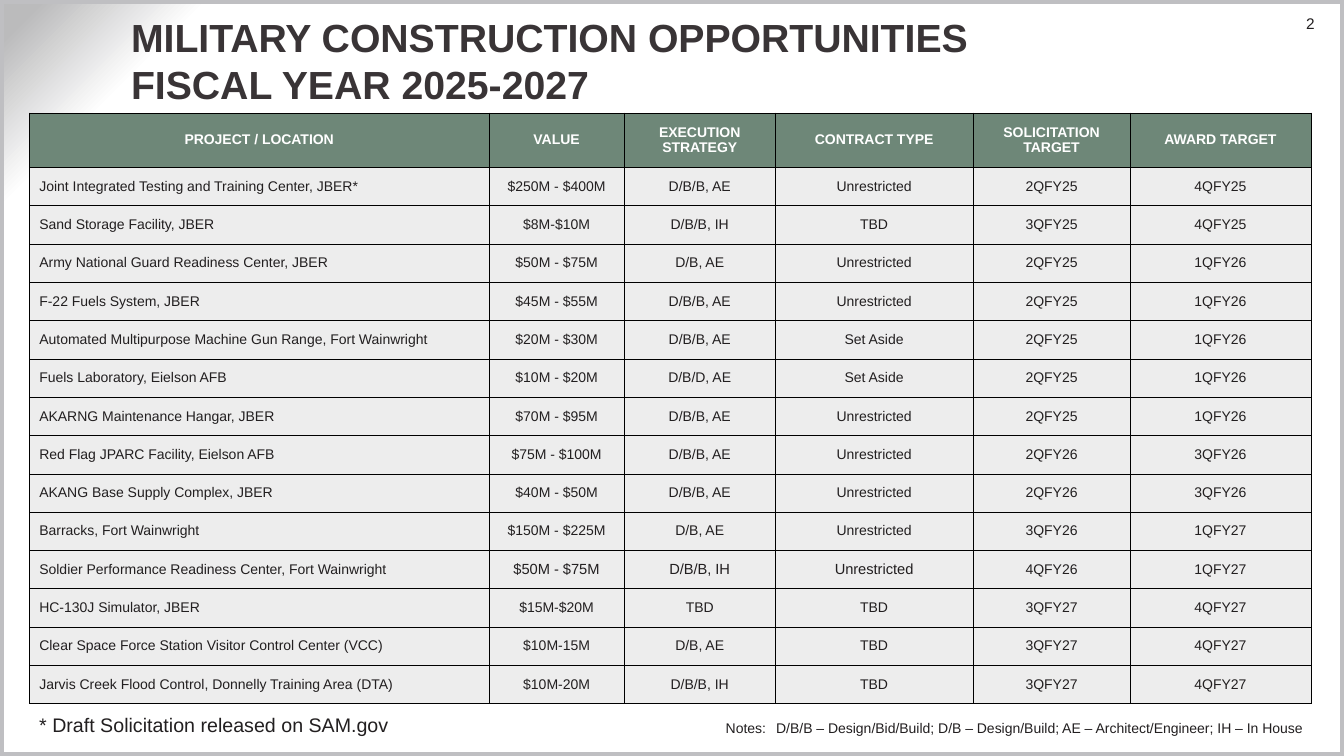
from pptx import Presentation
from pptx import util as u
from pptx.dml.color import RGBColor
from pptx.enum import shapes, text
from pptx.oxml import parse_xml
from pptx.oxml.ns import nsdecls

COLORS = {"ink": "221F20", "title": "393436", "white": "FFFFFF", "frame": "BFBFC2",
          "corner": "BBBBBC", "header": "6E8778", "row": "EDEDED", "grid": "000000"}
LEFT, CENTER, RIGHT = text.PP_ALIGN.LEFT, text.PP_ALIGN.CENTER, text.PP_ALIGN.RIGHT
COLUMN_WIDTHS = [4.56, 1.34, 1.5, 1.96, 1.56, 1.79]
HEADER_HEIGHT, ROW_HEIGHT = 0.54, 0.38
NOTE_TABS = [0.25, 0.5, 0.75, 1, 1.5, 2, 2.25, 2.5]
HEADINGS = ["PROJECT / LOCATION", "VALUE", "EXECUTION STRATEGY", "CONTRACT TYPE",
            "SOLICITATION TARGET", "AWARD TARGET"]
PROJECTS = [
    ["Joint Integrated Testing and Training Center, JBER*", "$250M - $400M", "D/B/B, AE", "Unrestricted", "2QFY25", "4QFY25"],
    ["Sand Storage Facility, JBER", "$8M-$10M", "D/B/B, IH", "TBD", "3QFY25", "4QFY25"],
    ["Army National Guard Readiness Center, JBER", "$50M - $75M", "D/B, AE", "Unrestricted", "2QFY25", "1QFY26"],
    ["F-22 Fuels System, JBER", "$45M - $55M", "D/B/B, AE", "Unrestricted", "2QFY25", "1QFY26"],
    ["Automated Multipurpose Machine Gun Range, Fort Wainwright", "$20M - $30M", "D/B/B, AE", "Set Aside", "2QFY25", "1QFY26"],
    ["Fuels Laboratory, Eielson AFB", "$10M - $20M", "D/B/D, AE", "Set Aside", "2QFY25", "1QFY26"],
    ["AKARNG Maintenance Hangar, JBER", "$70M - $95M", "D/B/B, AE", "Unrestricted", "2QFY25", "1QFY26"],
    ["Red Flag JPARC Facility, Eielson AFB", "$75M - $100M", "D/B/B, AE", "Unrestricted", "2QFY26", "3QFY26"],
    ["AKANG Base Supply Complex, JBER", "$40M - $50M", "D/B/B, AE", "Unrestricted", "2QFY26", "3QFY26"],
    ["Barracks, Fort Wainwright", "$150M - $225M", "D/B, AE", "Unrestricted", "3QFY26", "1QFY27"],
    ["Soldier Performance Readiness Center, Fort Wainwright", "$50M - $75M", "D/B/B, IH", "Unrestricted", "4QFY26", "1QFY27"],
    ["HC-130J Simulator, JBER", "$15M-$20M", "TBD", "TBD", "3QFY27", "4QFY27"],
    ["Clear Space Force Station Visitor Control Center (VCC)", "$10M-15M", "D/B, AE", "TBD", "3QFY27", "4QFY27"],
    ["Jarvis Creek Flood Control, Donnelly Training Area (DTA)", "$10M-20M", "D/B/B, IH", "TBD", "3QFY27", "4QFY27"],
]
# Cells set slightly larger than the rest: (project row, column)
LARGER_CELLS = {(11, 1), (11, 2), (11, 3)}


class SlideBuilder:
    def __init__(self, page, font="Arial"):
        self.page, self.font = page, font

    def color(self, name):
        return RGBColor.from_string(COLORS[name])

    def set_text(self, frame, words, size, color="ink", align=LEFT, bold=False):
        frame.text = words
        for para in frame.paragraphs:
            para.alignment = align
            for span in para.runs:
                span.font.name, span.font.size, span.font.bold = self.font, u.Pt(size), bold
                span.font.color.rgb = self.color(color)

    def margins(self, frame, left, top, right, bottom):
        frame.margin_left, frame.margin_right = u.Inches(left), u.Inches(right)
        frame.margin_top, frame.margin_bottom = u.Inches(top), u.Inches(bottom)

    def background(self):
        stops = "".join(f'<a:gs pos="{pos}000"><a:srgbClr val="{COLORS[name]}"/></a:gs>'
                        for pos, name in [(87, "white"), (90, "white"), (98, "corner")])
        self.page.element.cSld.insert(0, parse_xml(
            f'<p:bg {nsdecls("p", "a")}><p:bgPr><a:gradFill><a:gsLst>{stops}</a:gsLst>'
            '<a:path path="circle"><a:fillToRect l="100000" t="100000"/></a:path>'
            '</a:gradFill><a:effectLst/></p:bgPr></p:bg>'))

    def border(self, width, height, points):
        box = self.page.shapes.add_shape(shapes.MSO_SHAPE.RECTANGLE, 0, 0,
                                         u.Inches(width), u.Inches(height))
        box.shadow.inherit = False
        box.fill.background()
        box.line.color.rgb = self.color("frame")
        box.line.width = u.Pt(points)

    def title(self, words, left, top, width, height):
        box = self.page.shapes.title
        box.left, box.top = u.Inches(left), u.Inches(top)
        box.width, box.height = u.Inches(width), u.Inches(height)
        frame = box.text_frame
        self.margins(frame, 0.05, 0, 0.05, 0)
        frame.vertical_anchor = text.MSO_ANCHOR.MIDDLE
        frame.auto_size = text.MSO_AUTO_SIZE.NONE
        self.set_text(frame, words, 28, "title", bold=True)

    def label(self, words, left, top, width, height, size, align=LEFT,
              margins=(0.1, 0.05, 0.1, 0.05), tabs=()):
        box = self.page.shapes.add_textbox(*map(u.Inches, (left, top, width, height)))
        frame = box.text_frame
        frame.word_wrap = True
        self.margins(frame, *margins)
        self.set_text(frame, words, size, align=align)
        if tabs:
            stops = "".join(f'<a:tab pos="{u.Inches(tab)}" algn="l"/>' for tab in tabs)
            frame.paragraphs[0]._p.get_or_add_pPr().append(
                parse_xml(f'<a:tabLst {nsdecls("a")}>{stops}</a:tabLst>'))

    def cell(self, cell, words, size, fill, color, align, bold):
        cell.vertical_anchor = text.MSO_ANCHOR.MIDDLE
        self.margins(cell, 0.1, 0.05, 0.1, 0.05)
        self.set_text(cell.text_frame, words, size, color, align, bold)
        properties = cell._tc.get_or_add_tcPr()
        for place, side in enumerate(("lnL", "lnR", "lnT", "lnB")):
            properties.insert(place, parse_xml(
                f'<a:{side} {nsdecls("a")} w="{u.Pt(0.25)}"><a:solidFill>'
                f'<a:srgbClr val="{COLORS["grid"]}"/></a:solidFill></a:{side}>'))
        cell.fill.solid()
        cell.fill.fore_color.rgb = self.color(fill)

    def table(self, rows, left, top):
        heights = [HEADER_HEIGHT] + [ROW_HEIGHT] * (len(rows) - 1)
        table = self.page.shapes.add_table(
            len(rows), len(COLUMN_WIDTHS), u.Inches(left), u.Inches(top),
            u.Inches(sum(COLUMN_WIDTHS)), u.Inches(sum(heights))).table
        for column, width in zip(table.columns, COLUMN_WIDTHS):
            column.width = u.Inches(width)
        for r, (row, height) in enumerate(zip(rows, heights)):
            table.rows[r].height = u.Inches(height)
            header = r == 0
            for c, words in enumerate(row):
                self.cell(table.cell(r, c), words,
                          size=10.5 if (r, c) in LARGER_CELLS else 10,
                          fill="header" if header else "row",
                          color="white" if header else "ink",
                          align=CENTER if header or c else LEFT, bold=header)


def main():
    deck = Presentation()
    deck.slide_width, deck.slide_height = u.Inches(13.33), u.Inches(7.5)
    slide = SlideBuilder(deck.slides.add_slide(deck.slide_layouts[5]))

    # Backdrop, page number and frame
    slide.background()
    slide.label("2", 12.44, 0.14, 0.6, 0.19, 11, RIGHT, margins=(0.1, 0, 0, 0))
    slide.border(13.33, 7.5, 6)

    # Title and opportunities table
    slide.title("MILITARY CONSTRUCTION OPPORTUNITIES\vFISCAL YEAR 2025-2027",
                1.25, 0.14, 11.14, 0.91)
    slide.table([HEADINGS] + PROJECTS, 0.29, 1.12)

    # Footnotes
    slide.label("* Draft Solicitation released on SAM.gov", 0.29, 7.02, 4.68, 0.34, 14)
    slide.label("Notes: \tD/B/B – Design/Bid/Build; D/B – Design/Build; "
                "AE – Architect/Engineer; IH – In House",
                7.1, 7.09, 5.93, 0.27, 10, tabs=NOTE_TABS)

    deck.save("out.pptx")


if __name__ == "__main__":
    main()
